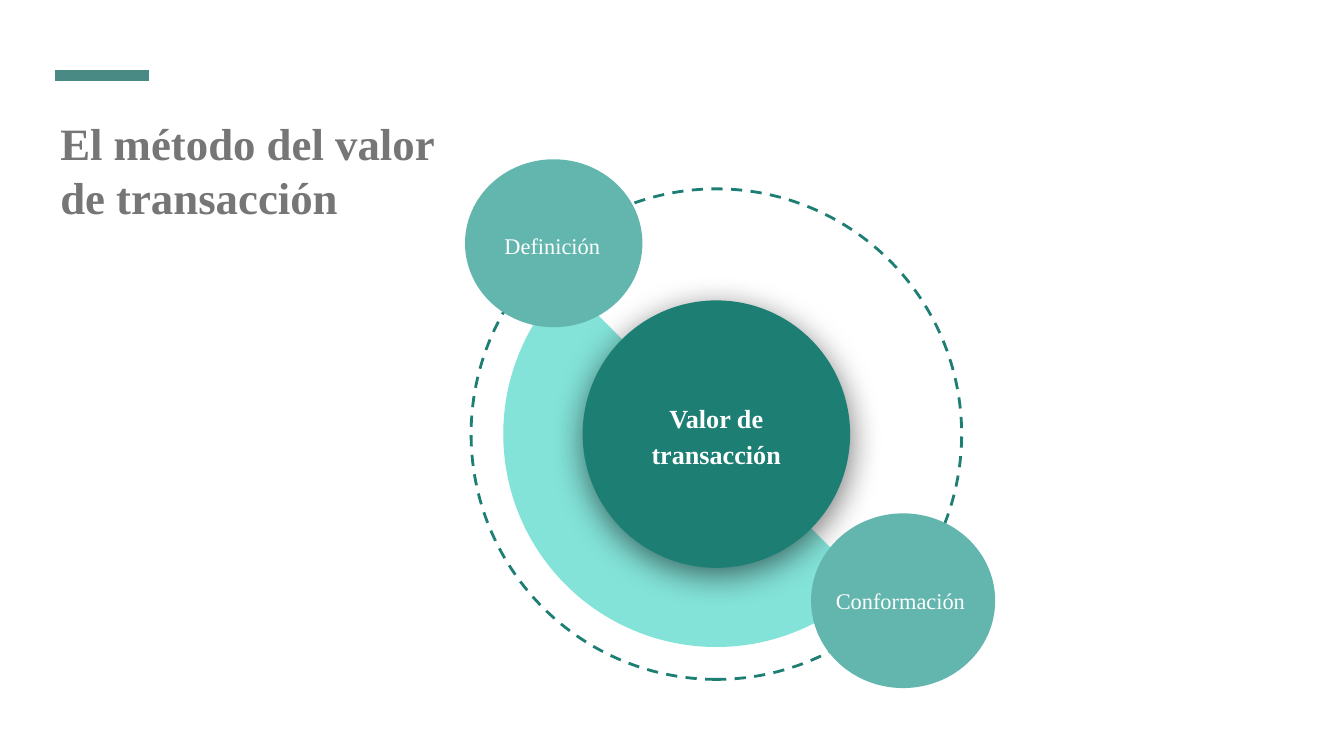
from lxml.etree import SubElement
from pptx import Presentation
from pptx.dml.color import RGBColor
from pptx.enum.dml import MSO_LINE
from pptx.enum.shapes import MSO_CONNECTOR, MSO_SHAPE
from pptx.enum.text import MSO_ANCHOR, PP_ALIGN
from pptx.oxml.ns import qn
from pptx.util import Inches, Pt

FONT = "Times New Roman"
TITLE = "El método del valor de transacción"
DARK, MIDDLE, LIGHT = "1D7E74", "62B6AE", "83E3D9"
ACCENT, GREY, WHITE = "4A8A84", "777676", "FFFFFF"

CENTER = (5.33, 3.23)
RING, SECTOR, CORE = 3.65, 3.17, 1.99
SECTOR_ANGLES = (26.9, 135.11)
CORE_LABEL = ("Valor de transacción", CENTER, (1.47, 0.9), DARK, 14, True)
SATELLITES = [
    ((4.12, 1.81), (1.32, 1.25), ("Definición", (4.11, 1.81), (0.94, 0.86), MIDDLE, 12, False)),
    ((6.72, 4.47), (1.37, 1.3), ("Conformación", (6.7, 4.45), (1.2, 0.41), MIDDLE, 12, False)),
]


def color(value):
    """Turn a hex string into a colour."""
    return RGBColor.from_string(value)


def add_centered(slide, kind, center, size, fill=None):
    """Add a flat shape around a centre point."""
    corner = [middle - length / 2 for middle, length in zip(center, size)]
    shape = slide.shapes.add_shape(kind, *map(Inches, (*corner, *size)))
    shape.shadow.inherit = False
    shape.line.fill.background()
    if fill:
        shape.fill.solid()
        shape.fill.fore_color.rgb = color(fill)
    else:
        shape.fill.background()
    return shape


def write(shape, text, size, ink, bold, align, spacing):
    """Write one formatted paragraph with even insets."""
    frame = shape.text_frame
    frame.word_wrap = True
    frame.margin_left = frame.margin_right = Inches(0.1)
    frame.margin_top = frame.margin_bottom = Inches(0.1)
    frame.text = text
    paragraph = frame.paragraphs[0]
    paragraph.alignment = align
    paragraph.line_spacing = spacing
    font = paragraph.runs[0].font
    font.name, font.size, font.bold = FONT, Pt(size), bold
    font.color.rgb = color(ink)


def add_label(slide, text, center, size, fill, points, bold):
    """Add a centred white label on its own plate."""
    plate = add_centered(slide, MSO_SHAPE.RECTANGLE, center, size, fill)
    plate.text_frame.vertical_anchor = MSO_ANCHOR.MIDDLE
    write(plate, text, points, WHITE, bold, PP_ALIGN.CENTER, 1.15)


def add_soft_shadow(shape):
    """Give a shape a blurred shadow below it."""
    effects = shape._element.spPr.find(qn("a:effectLst"))
    shadow = SubElement(effects, qn("a:outerShdw"), blurRad=str(Pt(18)),
                        dist=str(Pt(4)), dir="5400000", algn="bl", rotWithShape="0")
    tone = SubElement(shadow, qn("a:srgbClr"), val="000000")
    SubElement(tone, qn("a:alpha"), val="55000")


def add_heading(slide):
    """Add the accent bar and the title."""
    bar = slide.shapes.add_connector(
        MSO_CONNECTOR.STRAIGHT, *map(Inches, (0.41, 0.56, 1.11, 0.56)))
    bar.line.color.rgb = color(ACCENT)
    bar.line.width = Pt(6)
    SubElement(bar._element.spPr, qn("a:effectLst"))
    title = slide.shapes.add_textbox(*map(Inches, (0.35, 0.76, 3.01, 3.44)))
    write(title, TITLE, 24, GREY, True, PP_ALIGN.LEFT, 1.0)


def add_diagram(slide):
    """Add the ring, the sector, the core and its satellites."""
    ring = add_centered(slide, MSO_SHAPE.OVAL, CENTER, (RING, RING))
    ring.rotation = 270
    ring.line.color.rgb = color(DARK)
    ring.line.width = Pt(1.5)
    ring.line.dash_style = MSO_LINE.DASH

    sector = add_centered(slide, MSO_SHAPE.PIE, CENTER, (SECTOR, SECTOR), LIGHT)
    for index, angle in enumerate(SECTOR_ANGLES):
        sector.adjustments[index] = angle

    add_soft_shadow(add_centered(slide, MSO_SHAPE.OVAL, CENTER, (CORE, CORE), DARK))
    add_label(slide, *CORE_LABEL)
    for center, size, label in SATELLITES:
        add_centered(slide, MSO_SHAPE.OVAL, center, size, MIDDLE)
        add_label(slide, *label)


def main():
    """Build and save the slide."""
    deck = Presentation()
    deck.slide_width = Inches(10)
    deck.slide_height = deck.slide_width * 9 // 16
    slide = deck.slides.add_slide(deck.slide_layouts[6])
    add_heading(slide)
    add_diagram(slide)
    deck.save("out.pptx")


if __name__ == "__main__":
    main()
